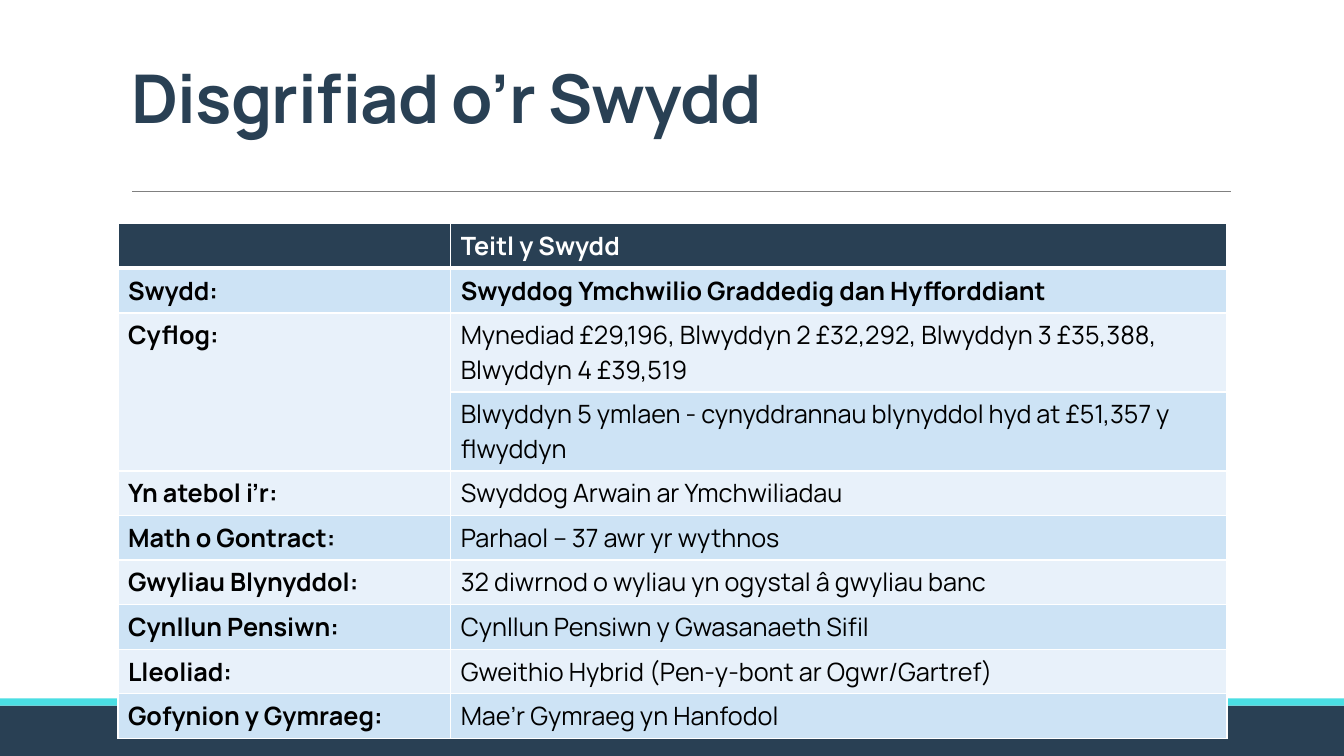
from lxml import etree
from pptx import Presentation
from pptx.dml.color import RGBColor
from pptx.enum.shapes import MSO_CONNECTOR, MSO_SHAPE
from pptx.enum.text import MSO_ANCHOR, MSO_AUTO_SIZE, PP_ALIGN
from pptx.oxml import parse_xml
from pptx.oxml.ns import nsdecls, qn
from pptx.util import Inches, Pt

FONT = "Manrope"
COLORS = {
    "navy": "294054",
    "turquoise": "4ADEE3",
    "rule": "808080",
    "white": "FFFFFF",
    "black": "000000",
    "band_dark": "CDE3F5",
    "band_light": "E8F1FA",
}
SLIDE_WIDTH, SLIDE_HEIGHT = 13.33, 7.5
JOB_ROWS = [
    ("", "Teitl y Swydd"),
    ("Swydd:", "Swyddog Ymchwilio Graddedig dan Hyfforddiant"),
    ("Cyflog:", "Mynediad £29,196, Blwyddyn 2 £32,292, Blwyddyn 3 £35,388, Blwyddyn 4 £39,519"),
    ("", "Blwyddyn 5 ymlaen - cynyddrannau blynyddol hyd at £51,357 y flwyddyn"),
    ("Yn atebol i’r:", "Swyddog Arwain ar Ymchwiliadau"),
    ("Math o Gontract:", "Parhaol – 37 awr yr wythnos"),
    ("Gwyliau Blynyddol:", "32 diwrnod o wyliau yn ogystal â gwyliau banc"),
    ("Cynllun Pensiwn:", "Cynllun Pensiwn y Gwasanaeth Sifil"),
    ("Lleoliad:", "Gweithio Hybrid (Pen-y-bont ar Ogwr/Gartref)"),
    ("Gofynion y Gymraeg:", "Mae’r Gymraeg yn Hanfodol"),
]
SALARY_ROW = 2


def color(name):
    return RGBColor.from_string(COLORS[name])


def add_run(paragraph, text, size, color_name, bold):
    run = paragraph.add_run()
    run.text = text
    run.font.name = FONT
    run.font.size = Pt(size)
    run.font.bold = bold
    run.font.color.rgb = color(color_name)
    return run


def add_bar(slide, left, top, width, height, color_name):
    bar = slide.shapes.add_shape(
        MSO_SHAPE.RECTANGLE, Inches(left), Inches(top), Inches(width), Inches(height))
    bar.shadow.inherit = False
    bar.fill.solid()
    bar.fill.fore_color.rgb = color(color_name)
    bar.line.fill.background()


def add_footer(slide, left, top, width, height):
    stripe = 0.07
    add_bar(slide, left, top + stripe, width, height - stripe, "navy")
    add_bar(slide, left, top, width, stripe, "turquoise")


def add_heading(slide, left, top, width, height):
    title = slide.shapes.title
    title.left, title.top = Inches(left), Inches(top)
    title.width, title.height = Inches(width), Inches(height)
    frame = title.text_frame
    frame.word_wrap = True
    frame.auto_size = MSO_AUTO_SIZE.NONE
    frame.vertical_anchor = MSO_ANCHOR.BOTTOM
    paragraph = frame.paragraphs[0]
    paragraph.alignment = PP_ALIGN.LEFT
    paragraph.line_spacing = 0.85
    run = add_run(paragraph, "Disgrifiad o’r Swydd", 48, "navy", True)
    run.font._element.set("spc", "-50")

    rule_left, rule_top = left + 0.11, top + height + 0.49
    rule = slide.shapes.add_connector(
        MSO_CONNECTOR.STRAIGHT, Inches(rule_left), Inches(rule_top),
        Inches(rule_left + 10.9), Inches(rule_top))
    rule.line.color.rgb = color("rule")
    rule.line.width = Pt(0.5)
    etree.SubElement(rule._element.spPr, qn("a:effectLst"))


def set_borders(cell, bottom_width):
    properties = cell._tc.get_or_add_tcPr()
    widths = {"lnL": 1, "lnR": 1, "lnT": 1, "lnB": bottom_width}
    for position, (side, width) in enumerate(widths.items()):
        border = parse_xml(
            f'<a:{side} {nsdecls("a")} w="{Pt(width)}"><a:solidFill>'
            f'<a:srgbClr val="{COLORS["white"]}"/></a:solidFill></a:{side}>')
        properties.insert(position, border)


def add_job_table(slide, left, top, column_widths, row_height):
    frame = slide.shapes.add_table(
        len(JOB_ROWS), len(column_widths), Inches(left), Inches(top),
        Inches(sum(column_widths)), Inches(row_height * len(JOB_ROWS)))
    table = frame.table
    table.horz_banding = False
    for column, width in zip(table.columns, column_widths):
        column.width = Inches(width)
    for row_index, texts in enumerate(JOB_ROWS):
        table.rows[row_index].height = Inches(row_height)
        header = row_index == 0
        band = "navy" if header else "band_dark" if row_index % 2 else "band_light"
        for column_index, text in enumerate(texts):
            cell = table.cell(row_index, column_index)
            cell.fill.solid()
            cell.fill.fore_color.rgb = color(band)
            set_borders(cell, 3 if header else 1)
            if text:
                bold = column_index == 0 or row_index < SALARY_ROW
                add_run(cell.text_frame.paragraphs[0], text, 18,
                        "white" if header else "black", bold)
    table.cell(SALARY_ROW, 0).merge(table.cell(SALARY_ROW + 1, 0))


def main():
    presentation = Presentation()
    presentation.slide_width = Inches(SLIDE_WIDTH)
    presentation.slide_height = Inches(SLIDE_HEIGHT)
    slide = presentation.slides.add_slide(presentation.slide_layouts[5])
    add_footer(slide, 0, 6.93, SLIDE_WIDTH, 0.57)
    add_heading(slide, 1.2, 0.31, 11, 1.1)
    add_job_table(slide, 1.17, 2.22, (3.3, 7.7), 0.41)
    presentation.save("out.pptx")


if __name__ == "__main__":
    main()
